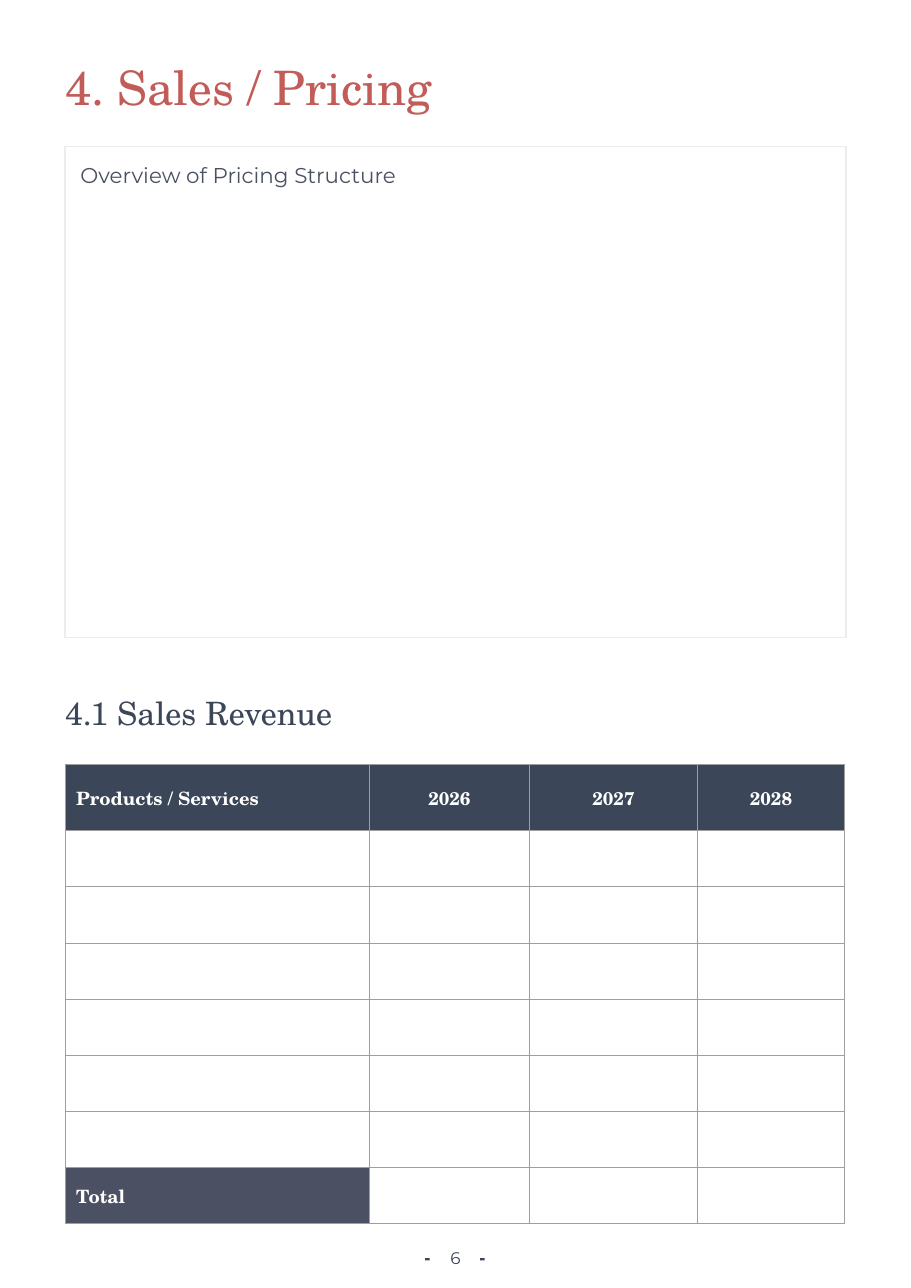
from lxml import etree
from pptx import Presentation
from pptx.dml.color import RGBColor
from pptx.enum import shapes, text
from pptx.oxml import ns
from pptx.util import Inches, Pt

SERIF, SANS = "TeX Gyre Schola", "Montserrat"
NAVY, SLATE, RED, WHITE = "3B4658", "4B5163", "C15C58", "FFFFFF"
LEFT, WIDTH = 0.59, 7.09


def rgb(code):
    return RGBColor.from_string(code)


def write(frame, words, size, face, color, align="LEFT", pad=0, bold=False):
    """Fill a text frame or table cell; pad is the left and top inset."""
    body = getattr(frame, "text_frame", frame)
    body.text = words
    body.word_wrap = True
    frame.margin_left = frame.margin_top = Inches(pad)
    frame.margin_right = frame.margin_bottom = Inches(min(pad, 0.1))
    frame.vertical_anchor = text.MSO_ANCHOR.TOP
    para = body.paragraphs[0]
    para.alignment = text.PP_ALIGN[align]
    font = para.runs[0].font
    font.size, font.name, font.bold = Pt(size), face, bold
    font.color.rgb = rgb(color)


deck = Presentation()
deck.slide_width, deck.slide_height = Inches(8.27), Inches(11.69)
slide = deck.slides.add_slide(deck.slide_layouts[5])

# Title
title = slide.shapes.title
title.left, title.top = Inches(LEFT), Inches(0.53)
title.width, title.height = Inches(WIDTH), Inches(0.52)
write(title.text_frame, "4. Sales / Pricing", 31, SERIF, RED)
title.text_frame.auto_size = text.MSO_AUTO_SIZE.NONE

# Pricing overview
panel = slide.shapes.add_shape(shapes.MSO_SHAPE.RECTANGLE, Inches(LEFT),
                               Inches(1.33), Inches(WIDTH), Inches(4.46))
panel.shadow.inherit = False
panel.fill.background()
panel.line.color.rgb = rgb("ECECEE")
panel.line.width = Pt(0.75)
write(panel.text_frame, "Overview of Pricing Structure", 14, SANS, SLATE, pad=0.14)

# Revenue heading
head = slide.shapes.add_textbox(Inches(LEFT), Inches(6.29), Inches(WIDTH), Inches(0.35))
write(head.text_frame, "4.1 Sales Revenue", 21, SERIF, NAVY)

# Revenue table
cols = [2.76, 1.46, 1.52, 1.34]
rows = [0.6] + [0.51] * 7
frame = slide.shapes.add_table(len(rows), len(cols), Inches(LEFT), Inches(6.94),
                               Inches(sum(cols)), Inches(sum(rows)))
table = frame.table
table.horz_banding = False
for col, width in zip(table.columns, cols):
    col.width = Inches(width)
for row, height in zip(table.rows, rows):
    row.height = Inches(height)

for cell in table.iter_cells():
    props = cell._tc.get_or_add_tcPr()
    for side in ("lnL", "lnR", "lnT", "lnB"):
        edge = etree.SubElement(props, ns.qn(f"a:{side}"), w=str(Pt(0.75)))
        paint = etree.SubElement(edge, ns.qn("a:solidFill"))
        etree.SubElement(paint, ns.qn("a:srgbClr"), val="9E9E9E")
    cell.fill.background()

labels = [(0, col, words, NAVY) for col, words in
          enumerate(["Products / Services", "2026", "2027", "2028"])]
labels.append((len(rows) - 1, 0, "Total", SLATE))
for row, col, words, color in labels:
    cell = table.cell(row, col)
    write(cell, words, 12, SERIF, WHITE, "CENTER" if col else "LEFT", 0.1, True)
    cell.vertical_anchor = text.MSO_ANCHOR.MIDDLE
    cell.fill.solid()
    cell.fill.fore_color.rgb = rgb(color)

# Page number between two dashes
footer = slide.shapes.add_group_shape()
page = footer.shapes.add_textbox(Inches(3.96), Inches(11.32), Inches(0.35), Inches(0.19))
write(page.text_frame, "6", 11, SANS, NAVY, "CENTER")
for left in (3.86, 4.36):
    dash = footer.shapes.add_shape(shapes.MSO_SHAPE.RECTANGLE, Inches(left),
                                   Inches(11.42), Inches(0.04), Inches(0.02))
    dash.shadow.inherit = False
    dash.fill.solid()
    dash.fill.fore_color.rgb = rgb(NAVY)
    dash.line.fill.background()

deck.save("out.pptx")
